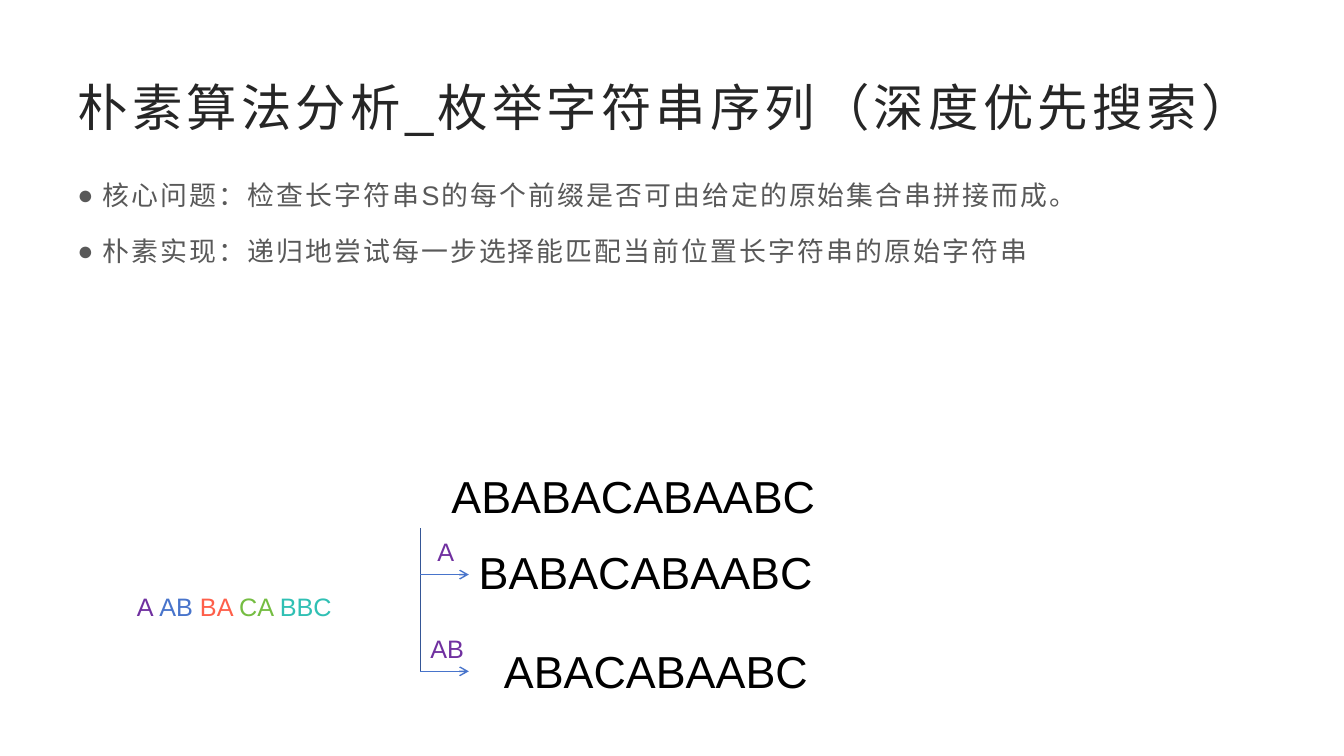
from dataclasses import dataclass

from lxml import etree
from pptx import Presentation
from pptx.dml.color import RGBColor
from pptx.enum import shapes, text
from pptx.oxml import ns
from pptx.util import Inches, Pt


@dataclass(frozen=True)
class Theme:
    font: str = "Arial"
    title_size: float = 36
    string_size: float = 32
    point_size: float = 19.2
    label_size: float = 18
    title: str = "262626"
    body: str = "595959"
    string: str = "000000"
    purple: str = "7030A0"
    blue: str = "4874CB"
    red: str = "FE5F4A"
    green: str = "75BD42"
    teal: str = "30C0B4"
    trunk: str = "355696"


THEME = Theme()


def add_run(paragraph, words, size, color, spacing=0):
    run = paragraph.add_run()
    run.text = words
    run.font.name = THEME.font
    run.font.size = Pt(size)
    run.font.color.rgb = RGBColor.from_string(color)
    if spacing:
        properties = run.font._element
        properties.set("lang", "zh-CN")
        properties.set("spc", str(int(spacing * 100)))


def add_title(slide, words):
    title = slide.shapes.title
    title.left, title.top = Inches(0.67), Inches(0.67)
    title.width, title.height = Inches(12), Inches(0.77)
    frame = title.text_frame
    frame.auto_size = text.MSO_AUTO_SIZE.NONE
    frame.vertical_anchor = text.MSO_ANCHOR.MIDDLE
    frame.paragraphs[0].alignment = text.PP_ALIGN.LEFT
    add_run(frame.paragraphs[0], words, THEME.title_size, THEME.title, 3)


def add_text_frame(slide, left, top, width, height):
    box = slide.shapes.add_textbox(Inches(left), Inches(top), Inches(width), Inches(height))
    box.text_frame.word_wrap = True
    return box.text_frame


def add_points(slide, points):
    frame = add_text_frame(slide, 0.67, 1.63, 12, 1.3)
    for index, point in enumerate(points):
        paragraph = frame.add_paragraph() if index else frame.paragraphs[0]
        # Hanging bullet
        properties = paragraph._p.get_or_add_pPr()
        properties.set("marL", str(Inches(0.25)))
        properties.set("indent", str(-Inches(0.25)))
        etree.SubElement(properties, ns.qn("a:buFont")).set("typeface", THEME.font)
        etree.SubElement(properties, ns.qn("a:buChar")).set("char", "●")
        paragraph.line_spacing = 1.3
        paragraph.space_after = Pt(10)
        add_run(paragraph, point, THEME.point_size, THEME.body, 1.5)


def add_label(slide, left, top, width, height, size, pieces):
    frame = add_text_frame(slide, left, top, width, height)
    for words, color in pieces:
        add_run(frame.paragraphs[0], words, size, color)


def add_line(slide, start, end, color, arrow=False):
    line = slide.shapes.add_connector(
        shapes.MSO_CONNECTOR.STRAIGHT, *(Inches(v) for v in (*start, *end)))
    line.line.color.rgb = RGBColor.from_string(color)
    line.line.width = Pt(1)
    if arrow:
        etree.SubElement(line.line._get_or_add_ln(), ns.qn("a:tailEnd")).set("type", "arrow")
    etree.SubElement(line._element.spPr, ns.qn("a:effectLst"))


def main():
    deck = Presentation()
    deck.slide_width, deck.slide_height = Inches(13.33), Inches(7.5)
    slide = deck.slides.add_slide(deck.slide_layouts.get_by_name("Title Only"))

    # Problem statement
    add_title(slide, "朴素算法分析_枚举字符串序列（深度优先搜索）")
    add_points(slide, [
        "核心问题：检查长字符串S的每个前缀是否可由给定的原始集合串拼接而成。",
        "朴素实现：递归地尝试每一步选择能匹配当前位置长字符串的原始字符串",
    ])

    # Long string and the set of primitives
    add_label(slide, 4.38, 4.6, 4.34, 0.64, THEME.string_size,
              [("ABABACABAABC", THEME.string)])
    add_label(slide, 1.26, 5.82, 2.27, 0.4, THEME.label_size, [
        ("A ", THEME.purple), ("AB ", THEME.blue), ("BA ", THEME.red),
        ("CA ", THEME.green), ("BBC", THEME.teal)])

    # Search tree: one branch for each matching primitive
    trunk_x = 4.17
    add_line(slide, (trunk_x, 5.24), (trunk_x, 6.67), THEME.trunk)
    branches = [
        ("A", 4.24, 5.7, "BABACABAABC", 4.65, 3.56, 5.35),
        ("AB", 4.17, 6.66, "ABACABAABC", 4.9, 3.31, 6.34),
    ]
    for prefix, prefix_x, arrow_y, rest, rest_x, rest_width, rest_y in branches:
        add_line(slide, (trunk_x, arrow_y), (trunk_x + 0.48, arrow_y), THEME.blue, arrow=True)
        add_label(slide, prefix_x, arrow_y - 0.43, 0.54, 0.4, THEME.label_size,
                  [(prefix, THEME.purple)])
        add_label(slide, rest_x, rest_y, rest_width, 0.64, THEME.string_size,
                  [(rest, THEME.string)])

    deck.save("out.pptx")


if __name__ == "__main__":
    main()
